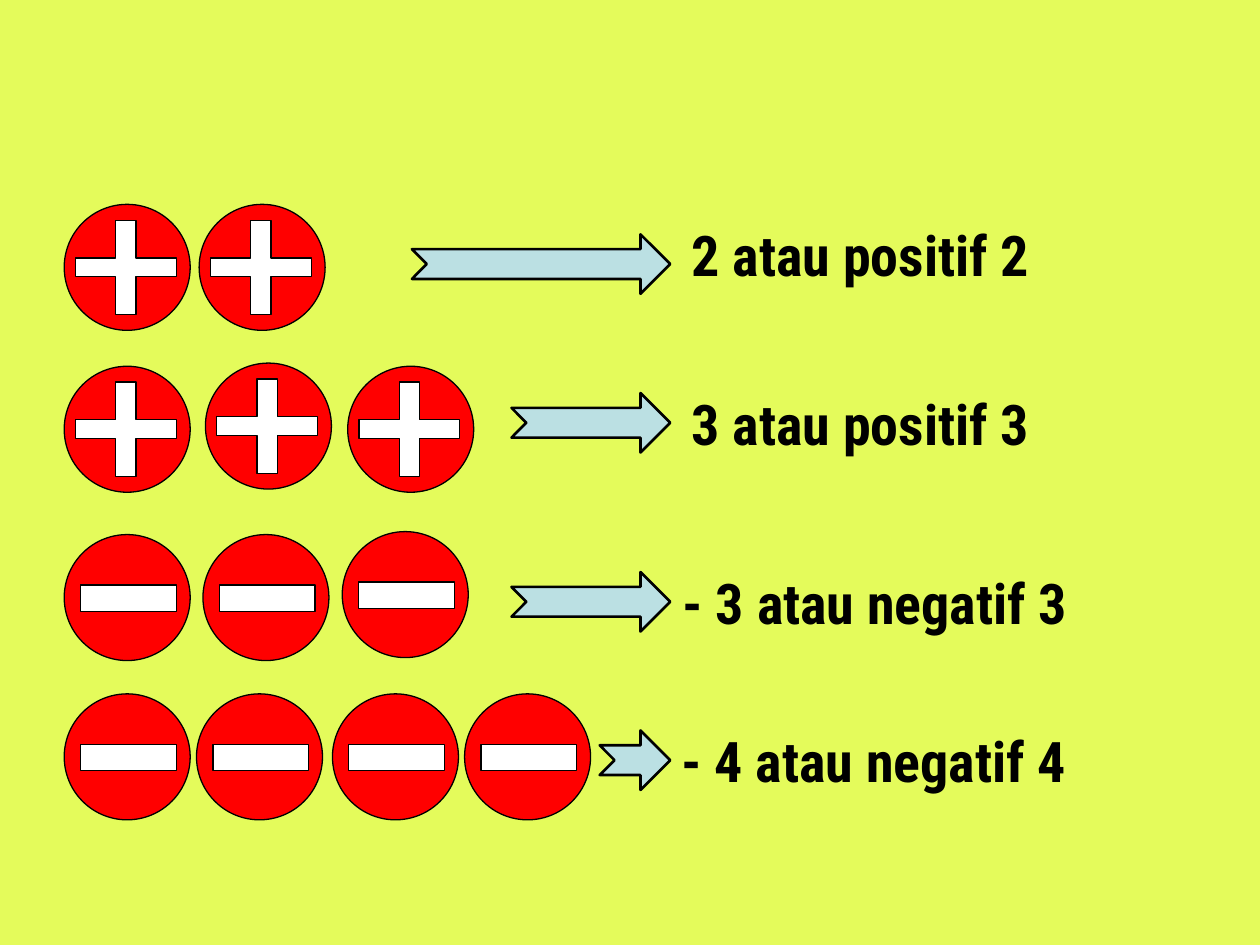
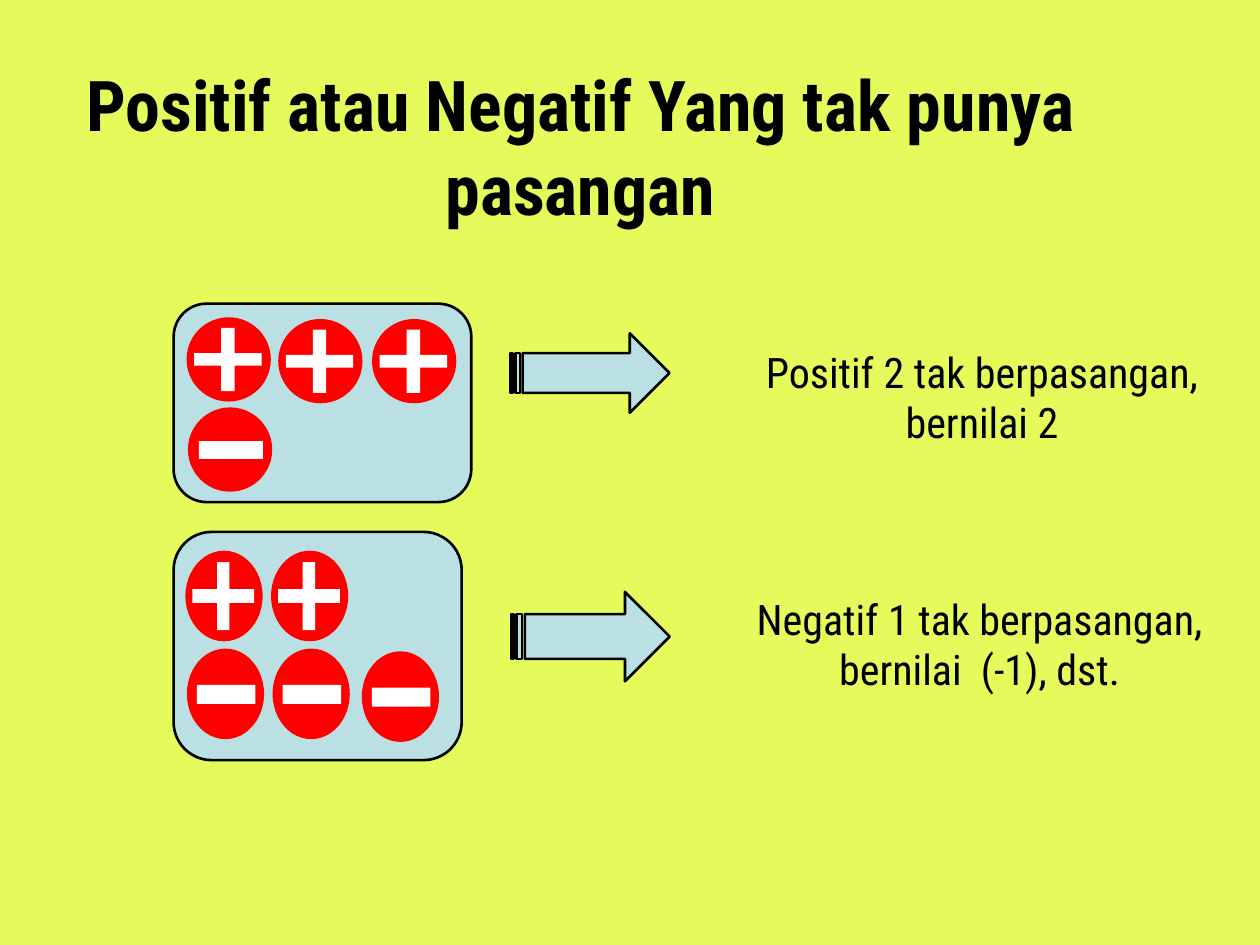
import pptx
import pptx.util
import pptx.dml.color
import pptx.enum.shapes
import pptx.enum.text

Pt = pptx.util.Pt
SHAPE = pptx.enum.shapes.MSO_SHAPE
ALIGN = pptx.enum.text.PP_ALIGN

LIME = "E4FB5B"
PALE_BLUE = "BBE0E3"
RED = "FF0000"
WHITE = "FFFFFF"
BLACK = "000000"
FONT = "Roboto Condensed"

# Corners of a plus sign, as fractions of its width and height
PLUS_CORNERS = [(0.4, 0), (0.4, 0.4), (0, 0.4), (0, 0.6), (0.4, 0.6), (0.4, 1),
                (0.6, 1), (0.6, 0.6), (1, 0.6), (1, 0.4), (0.6, 0.4), (0.6, 0)]


def paint(fill, color):
    fill.solid()
    fill.fore_color.rgb = pptx.dml.color.RGBColor.from_string(color)


def finish(shape, color, line_width):
    """Give a shape its fill and black outline; a width of 0 means no outline."""
    shape.shadow.inherit = False
    paint(shape.fill, color)
    if line_width:
        paint(shape.line.fill, BLACK)
        shape.line.width = Pt(line_width)
    else:
        shape.line.fill.background()


deck = pptx.Presentation()
deck.slide_width = Pt(720)
deck.slide_height = Pt(540)
paint(deck.slide_master.background.fill, LIME)

values_page = deck.slides.add_slide(deck.slide_layouts[6])
pairs_page = deck.slides.add_slide(deck.slide_layouts[5])

title = pairs_page.shapes.title
title.left, title.top, title.width, title.height = Pt(25.2), Pt(31.7), Pt(612.7), Pt(103)
title.text_frame.text = "Positif atau Negatif Yang tak punya pasangan"
texts = [(title, 40, True, ALIGN.CENTER)]

# Label, label left and top, arrow left and top, tokens as (sign, left, top)
value_rows = [
    ("2 atau positif 2", 388.1, 122.4, 235.4, 133.9,
     [("+", 36.7, 116.8), ("+", 113.8, 116.8)]),
    ("3 atau positif 3", 388.1, 218.9, 292.3, 224.6,
     [("+", 36.7, 209.3), ("+", 117.4, 207.5), ("+", 198.7, 209.3)]),
    ("- 3 atau negatif 3", 383, 321.1, 292.3, 326.9,
     [("-", 36.7, 305.5), ("-", 116, 305.5), ("-", 195.6, 303.8)]),
    ("- 4 atau negatif 4", 382.4, 411.8, 342.7, 417.4,
     [("-", left, 396.5) for left in (36.7, 112.3, 190, 265.5)]),
]
token_sets = []
for label, label_left, label_top, arrow_left, arrow_top, tokens in value_rows:
    arrow = values_page.shapes.add_shape(
        SHAPE.NOTCHED_RIGHT_ARROW, Pt(arrow_left), Pt(arrow_top), Pt(383 - arrow_left), Pt(34))
    finish(arrow, PALE_BLUE, 1.5)
    box = values_page.shapes.add_textbox(Pt(label_left), Pt(label_top), Pt(300), Pt(45.4))
    box.text_frame.text = label
    texts.append((box, 32, True, ALIGN.LEFT))
    token_sets.append((values_page.shapes.add_group_shape(), 72, 72, 0.75, tokens))

# Label and its box, arrow box, panel box, token width and height, tokens
pair_rows = [
    ("Positif 2 tak berpasangan, bernilai 2", (411.1, 194.4, 300.2, 64.8),
     (291.6, 190.5, 91, 45.4), (99.2, 173.5, 170.1, 113.4), 48.2, 48.2,
     [("+", 106.6, 181.3), ("+", 159, 182.3), ("+", 212.6, 182.3), ("-", 107.4, 232.8)]),
    ("Negatif 1 tak berpasangan, bernilai  (-1), dst.", (399.6, 335.5, 320.4, 64.8),
     (292, 338.2, 90.7, 51.1), (99.2, 304, 164.6, 130.4), 44.1, 51.8,
     [("+", 106, 314.7), ("+", 154.9, 314.7),
      ("-", 106.8, 370.6), ("-", 155.8, 370.6), ("-", 206.8, 372.2)]),
]
for label, label_box, arrow_box, panel_box, width, height, tokens in pair_rows:
    arrow = pairs_page.shapes.add_shape(SHAPE.STRIPED_RIGHT_ARROW, *map(Pt, arrow_box))
    finish(arrow, PALE_BLUE, 1.5)
    box = pairs_page.shapes.add_textbox(*map(Pt, label_box))
    box.text_frame.text = label
    texts.append((box, 24, False, ALIGN.CENTER))
    group = pairs_page.shapes.add_group_shape()
    panel = group.shapes.add_shape(SHAPE.ROUNDED_RECTANGLE, *map(Pt, panel_box))
    finish(panel, PALE_BLUE, 1.5)
    token_sets.append((group, width, height, 0, tokens))

for group, width, height, line_width, tokens in token_sets:
    for sign, left, top in tokens:
        disc = group.shapes.add_shape(SHAPE.OVAL, Pt(left), Pt(top), Pt(width), Pt(height))
        finish(disc, RED, line_width)
        if sign == "+":
            corners = [(Pt(left + width * (0.09 + 0.8 * x)), Pt(top + height * (0.125 + 0.75 * y)))
                       for x, y in PLUS_CORNERS]
            outline = group.shapes.build_freeform(*corners[0])
            outline.add_line_segments(corners[1:], close=True)
            mark = outline.convert_to_shape()
        else:
            mark = group.shapes.add_shape(
                SHAPE.RECTANGLE, Pt(left + width * 0.13), Pt(top + height * 0.4),
                Pt(width * 0.76), Pt(height * 0.21))
        finish(mark, WHITE, line_width)

for box, size, bold, alignment in texts:
    frame = box.text_frame
    frame.word_wrap = True
    frame.auto_size = pptx.enum.text.MSO_AUTO_SIZE.NONE
    frame.vertical_anchor = pptx.enum.text.MSO_ANCHOR.TOP
    para = frame.paragraphs[0]
    para.alignment = alignment
    for span in para.runs:
        span.font.name = FONT
        span.font.size = Pt(size)
        span.font.bold = bold
        paint(span.font.fill, BLACK)

deck.save("out.pptx")
